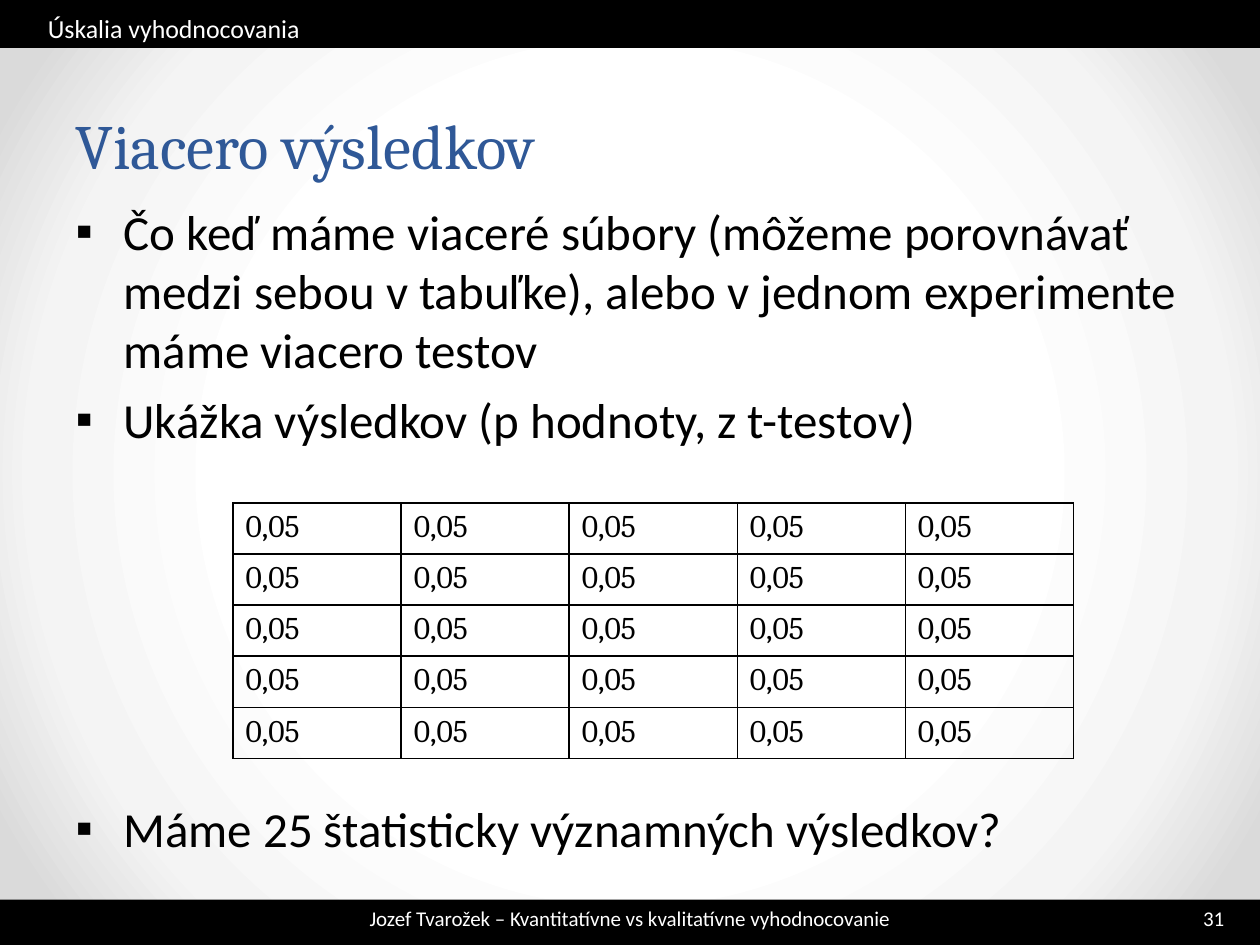
from lxml.etree import SubElement
from pptx import Presentation
from pptx.dml.color import RGBColor
from pptx.enum.shapes import MSO_SHAPE
from pptx.enum.text import MSO_ANCHOR, MSO_AUTO_SIZE, PP_ALIGN
from pptx.oxml import parse_xml
from pptx.oxml.ns import nsdecls, qn
from pptx.util import Inches, Pt

BLACK = RGBColor(0x00, 0x00, 0x00)
WHITE = RGBColor(0xFF, 0xFF, 0xFF)
BLUE = RGBColor(0x2F, 0x58, 0x97)
BACKGROUND_STOPS = [(50, WHITE), (76, RGBColor(0xF4, 0xF4, 0xF4)), (92, RGBColor(0xDA, 0xDA, 0xDA))]
BULLETS = [
    ("Čo keď máme viaceré súbory (môžeme porovnávať medzi sebou v tabuľke), "
     "alebo v jednom experimente máme viacero testov", 6.5),
    ("Ukážka výsledkov (p hodnoty, z t-testov)", 6.5),
    ("Máme 25 štatisticky významných výsledkov?", 200),
]
P_VALUES = [["0,05"] * 5 for _ in range(5)]


def set_background(page):
    """Give the page a radial gradient that darkens towards the corners."""
    page.background.fill.gradient()
    old = page.element.find(".//" + qn("a:gradFill"))
    stops = "".join(
        f'<a:gs pos="{position * 1000}"><a:srgbClr val="{color}"/></a:gs>'
        for position, color in BACKGROUND_STOPS
    )
    gradient = parse_xml(
        f'<a:gradFill {nsdecls("a")} rotWithShape="1"><a:gsLst>{stops}</a:gsLst>'
        '<a:path path="circle"><a:fillToRect l="50000" t="50000" r="50000" b="50000"/>'
        "</a:path></a:gradFill>"
    )
    old.getparent().replace(old, gradient)


def place(shape, left, top, width, height):
    """Move and size a shape, with lengths in inches."""
    shape.left, shape.top = Inches(left), Inches(top)
    shape.width, shape.height = Inches(width), Inches(height)


def style_paragraph(para, size, color, name="Calibri", align=PP_ALIGN.LEFT):
    """Set the font and alignment of a paragraph."""
    para.font.size = Pt(size)
    para.font.name = name
    para.font.color.rgb = color
    para.alignment = align


def set_bullet(para, indent, character=None):
    """Set a hanging indent with a bullet, or no bullet at all."""
    properties = para._p.get_or_add_pPr()
    properties.set("marL", str(Inches(indent)))
    properties.set("indent", str(-Inches(indent)))
    if character:
        SubElement(properties, qn("a:buFont"), typeface="Arial")
        SubElement(properties, qn("a:buChar"), char=character)
    else:
        SubElement(properties, qn("a:buNone"))


def add_bar(page, top):
    """Add a black bar across the page."""
    bar = page.shapes.add_shape(MSO_SHAPE.RECTANGLE, 0, Inches(top), Inches(10), Inches(0.38))
    bar.shadow.inherit = False
    bar.fill.solid()
    bar.fill.fore_color.rgb = BLACK
    bar.line.fill.background()


def add_label(page, text, left, width, align=PP_ALIGN.LEFT):
    """Add a small white text in the bottom bar."""
    box = page.shapes.add_textbox(Inches(left), Inches(7.14), Inches(width), Inches(0.3))
    box.text_frame.word_wrap = True
    para = box.text_frame.paragraphs[0]
    para.text = text
    style_paragraph(para, 12, WHITE, align=align)


def fill_title(title):
    """Write the slide title."""
    place(title, 0.5, 0.69, 9, 0.7)
    frame = title.text_frame
    frame.text = "Viacero výsledkov"
    frame.auto_size = MSO_AUTO_SIZE.NONE
    frame.vertical_anchor = MSO_ANCHOR.MIDDLE
    para = frame.paragraphs[0]
    style_paragraph(para, 36, BLUE, "Cambria")
    para.line_spacing = Pt(58)


def fill_body(body):
    """Write the bullet list, leaving room for the table."""
    place(body, 0.5, 1.55, 9, 5.43)
    frame = body.text_frame
    frame.text = "\n".join(text for text, _ in BULLETS)
    frame.auto_size = MSO_AUTO_SIZE.NONE
    for para, (_, gap) in zip(frame.paragraphs, BULLETS):
        style_paragraph(para, 28, BLACK)
        para.space_before = Pt(gap)
        set_bullet(para, 0.38, "▪")


def fill_header(header):
    """Write the section name in the top bar."""
    place(header, 0.28, 0.05, 9.45, 0.33)
    frame = header.text_frame
    frame.text = "Úskalia vyhodnocovania"
    frame.auto_size = MSO_AUTO_SIZE.NONE
    para = frame.paragraphs[0]
    style_paragraph(para, 14.8, WHITE)
    set_bullet(para, 0)


def set_borders(cell):
    """Draw thin black lines on all sides of a cell."""
    properties = cell._tc.get_or_add_tcPr()
    for index, side in enumerate(("lnL", "lnR", "lnT", "lnB")):
        properties.insert(index, parse_xml(
            f'<a:{side} {nsdecls("a")} w="{Pt(1)}"><a:solidFill>'
            f'<a:srgbClr val="{BLACK}"/></a:solidFill></a:{side}>'
        ))


def add_value_table(page):
    """Add the grid of p values."""
    table = page.shapes.add_table(
        len(P_VALUES), len(P_VALUES[0]), Inches(1.85), Inches(3.99), Inches(6.67), Inches(2.03)
    ).table
    table.first_row = False
    table.horz_banding = False
    for row, values in enumerate(P_VALUES):
        for column, value in enumerate(values):
            cell = table.cell(row, column)
            cell.text = value
            cell.fill.background()
            style_paragraph(cell.text_frame.paragraphs[0], 18, BLACK, "Cambria")
            set_borders(cell)


def main():
    """Build the slide and save the deck."""
    deck = Presentation()
    deck.slide_width, deck.slide_height = Inches(10), Inches(7.5)
    page = deck.slides.add_slide(deck.slide_layouts.get_by_name("Two Content"))
    set_background(page)
    title, body, header = page.placeholders
    for top in (7.14, 0):
        add_bar(page, top)
    for placeholder in (title, body, header):
        page.shapes.element.append(placeholder.element)
    fill_title(title)
    fill_body(body)
    fill_header(header)
    add_label(page, "31", 9.45, 0.55)
    add_label(page, "Jozef Tvarožek – Kvantitatívne vs kvalitatívne vyhodnocovanie",
              2.48, 5.04, PP_ALIGN.CENTER)
    add_value_table(page)
    deck.save("out.pptx")


if __name__ == "__main__":
    main()
